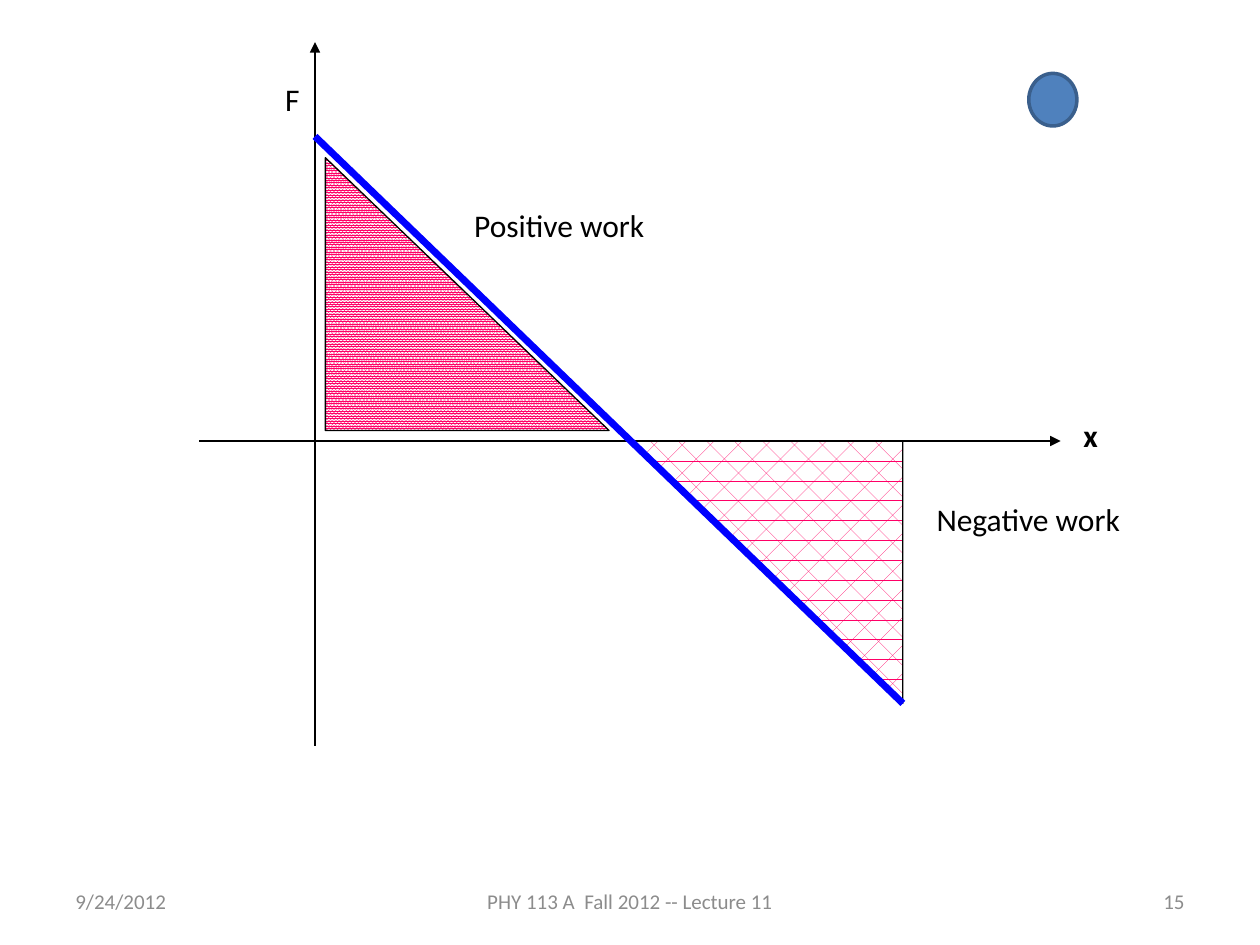
import pptx
import pptx.util
import pptx.dml.color
import pptx.enum.dml
import pptx.enum.shapes
import pptx.enum.text
from lxml import etree

Cm = pptx.util.Cm
Pt = pptx.util.Pt
RGBColor = pptx.dml.color.RGBColor
SHAPE = pptx.enum.shapes.MSO_SHAPE
PATTERN = pptx.enum.dml.MSO_PATTERN
ALIGN = pptx.enum.text.PP_ALIGN
ANCHOR = pptx.enum.text.MSO_ANCHOR
FIT = pptx.enum.text.MSO_AUTO_SIZE

BLACK = RGBColor(0x00, 0x00, 0x00)
WHITE = RGBColor(0xFF, 0xFF, 0xFF)
GRAY = RGBColor(0x8C, 0x8C, 0x8C)
PINK = RGBColor(0xFF, 0x00, 0x66)
BLUE = RGBColor(0x00, 0x00, 0xFF)
BALL_FILL = RGBColor(0x4F, 0x81, 0xBD)
BALL_LINE = RGBColor(0x3A, 0x5F, 0x8C)
A = "{http://schemas.openxmlformats.org/drawingml/2006/main}"

prs = pptx.Presentation()
prs.slide_width, prs.slide_height = Cm(25.4), Cm(19.05)
s = prs.slides.add_slide(prs.slide_layouts[6])


def add_text(text, box, color, align, frame, font):
    tf = s.shapes.add_textbox(*map(Cm, box)).text_frame
    for name, value in frame.items():
        setattr(tf, name, value)
    p = tf.paragraphs[0]
    p.alignment = align
    r = p.add_run()
    r.text = text
    r.font.color.rgb = color
    for name, value in font.items():
        setattr(r.font, name, value)


footer_frame = {"word_wrap": True, "vertical_anchor": ANCHOR.MIDDLE}
footer_font = {"name": "Calibri", "size": Pt(12)}
for text, left, width, align in [
    ("9/24/2012", 1.27, 5.93, ALIGN.LEFT),
    ("PHY 113 A  Fall 2012 -- Lecture 11", 8.68, 8.04, ALIGN.CENTER),
    ("15", 18.2, 5.93, ALIGN.RIGHT),
]:
    add_text(text, (left, 17.65, width, 1.02), GRAY, align, footer_frame, footer_font)

for box, pattern, rotation in [
    ((6.56, 3.18, 5.72, 5.5), PATTERN.PERCENT_90, 0),
    ((12.7, 8.89, 5.5, 5.29), PATTERN.DIVOT, 180),
]:
    sp = s.shapes.add_shape(SHAPE.RIGHT_TRIANGLE, *map(Cm, box))
    sp.shadow.inherit = False
    sp.rotation = rotation
    sp.fill.patterned()
    sp.fill.pattern = pattern
    sp.fill.fore_color.rgb = PINK
    sp.fill.back_color.rgb = WHITE
    sp.line.color.rgb = BLACK
    sp.line.width = Pt(0.75)

label_frame = {"word_wrap": True, "auto_size": FIT.SHAPE_TO_FIT_TEXT}
for text, left, top, width, bold in [
    ("x", 21.59, 8.26, 0.85, True),
    ("F", 5.5, 1.48, 2.33, False),
    ("Positive work", 9.31, 4.02, 8.04, False),
    ("Negative work", 18.63, 9.95, 6.14, False),
]:
    label_font = {"name": "Calibri", "size": Pt(18), "bold": bold}
    add_text(text, (left, top, width, 1.27), BLACK, ALIGN.LEFT, label_frame, label_font)

for ends, color, width, arrow in [
    ((4.02, 8.89, 21.38, 8.89), BLACK, 0.75, True),
    ((6.35, 15.03, 6.35, 0.85), BLACK, 0.75, True),
    ((6.35, 2.75, 18.2, 14.18), BLUE, 4, False),
]:
    line = s.shapes.add_connector(pptx.enum.shapes.MSO_CONNECTOR.STRAIGHT, *map(Cm, ends))
    line.line.color.rgb = color
    line.line.width = Pt(width)
    spPr = line._element.spPr
    if arrow:
        etree.SubElement(spPr.find(A + "ln"), A + "tailEnd", type="triangle")
    etree.SubElement(spPr, A + "effectLst")

ball = s.shapes.add_shape(SHAPE.OVAL, Cm(20.74), Cm(1.48), Cm(0.97), Cm(1.06))
ball.shadow.inherit = False
ball.fill.solid()
ball.fill.fore_color.rgb = BALL_FILL
ball.line.color.rgb = BALL_LINE
ball.line.width = Pt(2)

prs.save("out.pptx")
